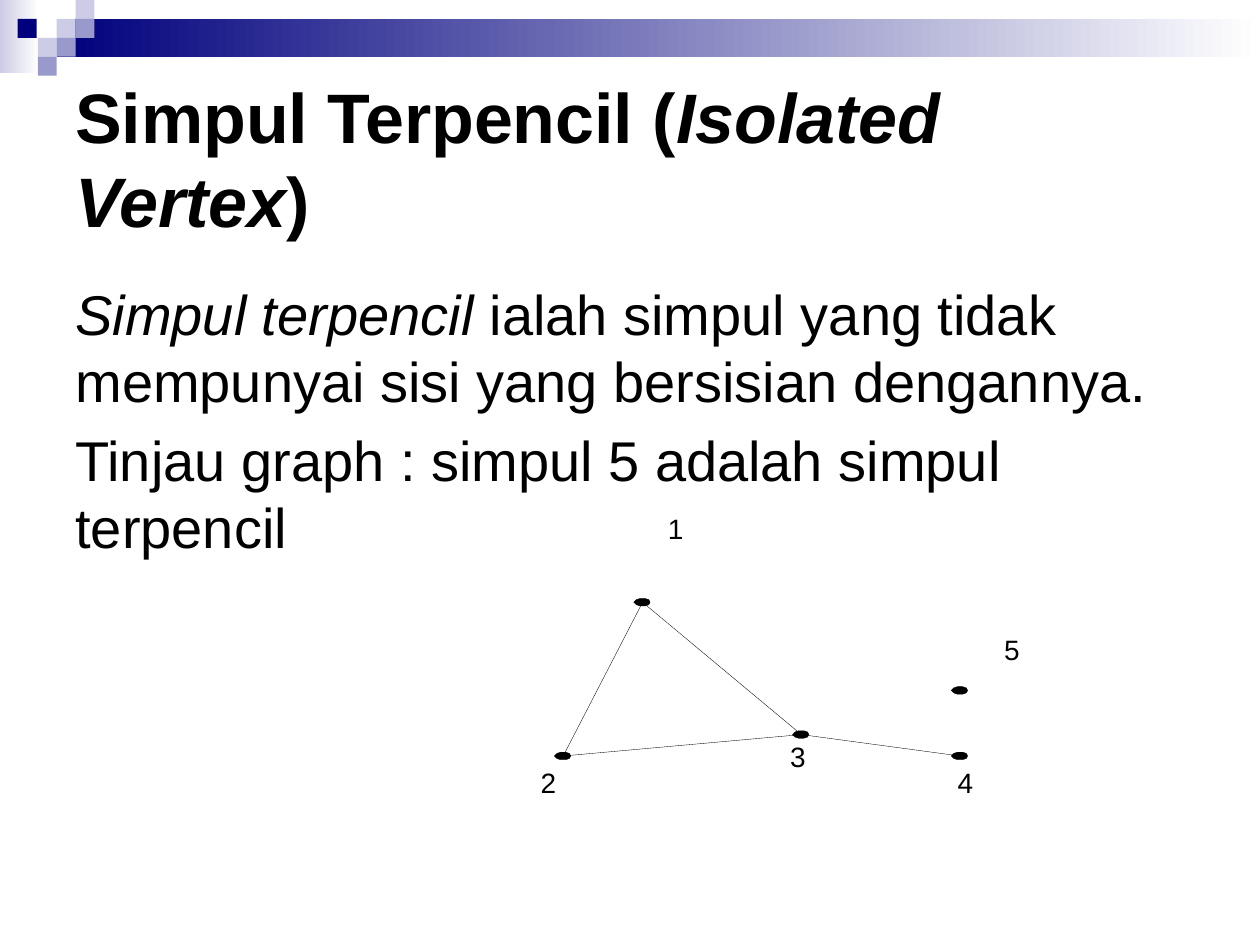
from lxml import etree
from pptx import Presentation
from pptx import util as u
from pptx.dml.color import RGBColor
from pptx.enum import shapes, text
from pptx.oxml.ns import qn

Inches, Pt = u.Inches, u.Pt
COLORS = {"navy": "00007D", "violet": "9999CC", "lilac": "CCCCE6",
          "white": "FFFFFF", "black": "000000"}
FONT = "Arial"
TILE = 0.15
HAIRLINE = 0.2

# Tiles of the header: left, top, colour
TILES = [(0.45, 0.15, "lilac"), (0.6, 0, "lilac"), (0.6, 0.15, "violet"),
         (0.3, 0.3, "lilac"), (0.14, 0.15, "navy"), (0.45, 0.3, "violet"),
         (0.3, 0.45, "violet")]

# Graph: centre of each vertex and top left corner of its label
VERTICES = {"1": (5.1, 4.78), "2": (4.47, 6), "3": (6.36, 5.83),
            "4": (7.62, 6), "5": (7.62, 5.48)}
LABELS = {"1": (5.3, 4.06), "2": (4.29, 6.08), "3": (6.27, 5.87),
          "4": (7.6, 6.08), "5": (7.97, 5.02)}
EDGES = ["12", "34", "23", "13"]

# Outline of a vertex around its centre
DOT = [(-0.07, 0), (-0.05, -0.02), (-0.02, -0.03), (0.02, -0.03), (0.05, -0.02),
       (0.06, 0), (0.05, 0.02), (0.02, 0.03), (-0.02, 0.03), (-0.05, 0.02)]


def rgb(name):
    return RGBColor.from_string(COLORS[name])


def add_rect(s, x, y, w, h, color, fade_to=None):
    """Add a plain rectangle, or one that fades from left to right."""
    sp = s.shapes.add_shape(shapes.MSO_SHAPE.RECTANGLE,
                            Inches(x), Inches(y), Inches(w), Inches(h))
    sp.shadow.inherit = False
    sp.line.fill.background()
    if fade_to is None:
        sp.fill.solid()
        sp.fill.fore_color.rgb = rgb(color)
        return
    sp.fill.gradient()
    sp.fill.gradient_angle = 0
    for stop, name, position in zip(sp.fill.gradient_stops, (color, fade_to), (0, 1)):
        stop.color.rgb = rgb(name)
        stop.position = position


def add_text(s, x, y, w, h, paragraphs, size, bold=False, before=0, wrap=True,
             margins=(0.1, 0.05), anchor=text.MSO_ANCHOR.TOP):
    """Add a text box; each paragraph is a list of (words, italic) pairs."""
    tf = s.shapes.add_textbox(Inches(x), Inches(y), Inches(w), Inches(h)).text_frame
    tf.word_wrap = wrap
    tf.vertical_anchor = anchor
    tf.margin_left = tf.margin_right = Inches(margins[0])
    tf.margin_top = tf.margin_bottom = Inches(margins[1])
    for i, runs in enumerate(paragraphs):
        p = tf.add_paragraph() if i else tf.paragraphs[0]
        p.space_before = Pt(before)
        for words, italic in runs:
            r = p.add_run()
            r.text = words
            r.font.name = FONT
            r.font.size = Pt(size)
            r.font.bold = bold
            r.font.italic = italic
            r.font.color.rgb = rgb("black")


def add_vertex(s, x, y):
    points = [(Inches(x + dx), Inches(y + dy)) for dx, dy in DOT]
    builder = s.shapes.build_freeform(*points[0])
    builder.add_line_segments(points[1:], close=True)
    sp = builder.convert_to_shape()
    sp.shadow.inherit = False
    sp.fill.solid()
    sp.fill.fore_color.rgb = rgb("black")
    sp.line.color.rgb = rgb("black")
    sp.line.width = Pt(HAIRLINE)


def add_edge(s, start, end):
    line = s.shapes.add_connector(shapes.MSO_CONNECTOR.STRAIGHT,
                                  *(Inches(v) for v in start + end))
    line.line.color.rgb = rgb("black")
    line.line.width = Pt(HAIRLINE)
    etree.SubElement(line._element.spPr, qn("a:effectLst"))


def add_header(s):
    add_rect(s, 0, 0, 0.31, 0.58, "lilac", fade_to="white")
    add_rect(s, 0.45, 0.15, 9.55, 0.3, "navy", fade_to="white")
    for x, y, color in TILES:
        add_rect(s, x, y, TILE, TILE, color)


def add_graph(s):
    for center in VERTICES.values():
        add_vertex(s, *center)
    for a, b in EDGES:
        add_edge(s, VERTICES[a], VERTICES[b])
    for name, (x, y) in LABELS.items():
        add_text(s, x, y, 0.12, 0.27, [[(name, False)]], 16,
                 wrap=False, margins=(0, 0))


def main():
    prs = Presentation()
    prs.slide_width, prs.slide_height = Inches(10), Inches(7.5)
    s = prs.slides.add_slide(prs.slide_layouts[6])
    add_header(s)
    add_text(s, 0.5, 0.5, 9, 1.5,
             [[("Simpul Terpencil (", False), ("Isolated Vertex", True), (")", False)]],
             40, bold=True, anchor=text.MSO_ANCHOR.MIDDLE)
    add_text(s, 0.5, 2.17, 9, 4.25,
             [[("Simpul terpencil", True),
               (" ialah simpul yang tidak mempunyai sisi yang bersisian dengannya.", False)],
              [("Tinjau graph : simpul 5 adalah simpul terpencil", False)]],
             32, before=6.4)
    add_graph(s)
    prs.save("out.pptx")


if __name__ == "__main__":
    main()
